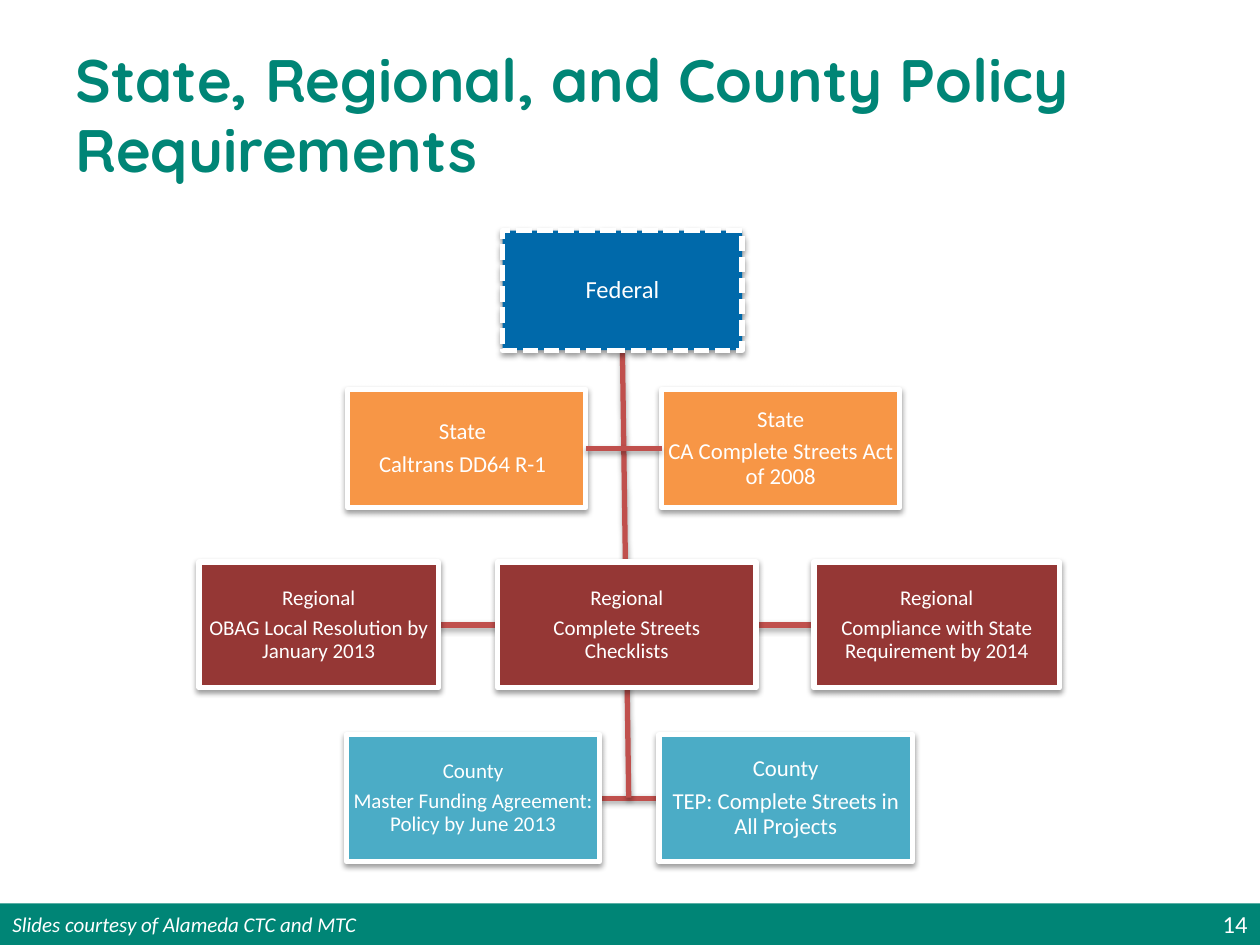
from pptx import Presentation, oxml, util as u
from pptx.dml.color import RGBColor
from pptx.enum import dml, shapes, text
from pptx.oxml.ns import nsdecls

COLORS = {
    "brand": "008576", "white": "FFFFFF", "link": "C0504D", "federal": "0069AA",
    "state": "F79646", "regional": "953735", "county": "4BACC6",
}
CELL = 0.1  # grid of 100 columns by 75 rows, in inches
TOP, LEFT, BOTTOM, RIGHT = range(4)  # connection sites of a rectangle

# Each policy: level, left, top, width, height in grid cells, text size, lines
POLICIES = {
    "federal": ("federal", 39.9, 18.3, 19, 9.5, 14, ["Federal"]),
    "caltrans": ("state", 27.6, 30.9, 18.9, 9.4, 13, ["State", "Caltrans DD64 R-1"]),
    "streets_act": ("state", 52.5, 30.9, 18.9, 9.4, 13,
                    ["State", "CA Complete Streets Act of 2008"]),
    "obag": ("regional", 15.8, 44.6, 19, 10, 12,
             ["Regional", "OBAG Local Resolution by January 2013"]),
    "checklists": ("regional", 39.5, 44.6, 20.5, 10, 12,
                   ["Regional", "Complete Streets", "Checklists"]),
    "compliance": ("regional", 64.6, 44.6, 19.5, 10, 12,
                   ["Regional", "Compliance with State Requirement by 2014"]),
    "funding": ("county", 27.5, 58.3, 20.1, 10.1, 12,
                ["County", "Master Funding Agreement: Policy by June 2013"]),
    "tep": ("county", 52.3, 58.3, 20.1, 10.1, 13,
            ["County", "TEP: Complete Streets in All Projects"]),
}


def grid(*cells):
    return [u.Inches(cell * CELL) for cell in cells]


def rgb(name):
    return RGBColor.from_string(COLORS[name])


def write(shape, lines, size, color="white", align="LEFT", spacing=1.0, after=0,
          **font_format):
    frame = shape.text_frame
    frame.word_wrap = True
    frame.vertical_anchor = text.MSO_ANCHOR.MIDDLE
    frame.text = "\n".join(lines)
    values = {"name": "Calibri", "size": u.Pt(size), **font_format}
    for paragraph in frame.paragraphs:
        paragraph.alignment = text.PP_ALIGN[align]
        paragraph.line_spacing = spacing
        paragraph.space_after = u.Pt(after)
        for key, value in values.items():
            setattr(paragraph.font, key, value)
        paragraph.font.color.rgb = rgb(color)


def add_shadow(shape, opacity):
    shape._element.spPr.append(oxml.parse_xml(
        f'<a:effectLst {nsdecls("a")}><a:outerShdw blurRad="40000" dist="21500" '
        f'dir="5400000" rotWithShape="0"><a:srgbClr val="000000">'
        f'<a:alpha val="{opacity * 1000}"/></a:srgbClr></a:outerShdw></a:effectLst>'))


def add_label(slide, area, lines, size, **style):
    write(slide.shapes.add_textbox(*grid(*area)), lines, size, **style)


def add_footer(slide):
    band = slide.shapes.add_shape(shapes.MSO_SHAPE.RECTANGLE, *grid(0, 71.7, 100, 3.3))
    band.shadow.inherit = False
    band.fill.solid()
    band.fill.fore_color.rgb = rgb("brand")
    band.line.fill.background()
    write(band, ["Slides courtesy of Alameda CTC and MTC"], 12, italic=True)
    add_label(slide, (95, 71.7, 5, 3.3), ["14"], 14, align="RIGHT")


def add_policy(slide, level, left, top, width, height, size, lines):
    box = slide.shapes.add_shape(shapes.MSO_SHAPE.RECTANGLE,
                                 *grid(left, top, width, height))
    box.fill.solid()
    box.fill.fore_color.rgb = rgb(level)
    box.line.color.rgb = rgb("white")
    box.line.width = u.Pt(3)
    add_shadow(box, 38)
    for side in ("left", "top", "right", "bottom"):
        setattr(box.text_frame, f"margin_{side}", u.Inches(0.01))
    write(box, lines, size, align="CENTER", spacing=0.9, after=round(size * 0.35, 2))
    return box


def add_link(slide, start=(0, 0), end=(0, 0)):
    link = slide.shapes.add_connector(shapes.MSO_CONNECTOR.STRAIGHT, *grid(*start, *end))
    link.line.color.rgb = rgb("link")
    link.line.width = u.Pt(3)
    add_shadow(link, 35)
    return link


def join(link, left_box, right_box):
    link.begin_connect(left_box, RIGHT)
    link.end_connect(right_box, LEFT)


def main():
    deck = Presentation()
    deck.slide_width, deck.slide_height = grid(100, 75)
    slide = deck.slides.add_slide(deck.slide_layouts[6])

    # Footer and title
    add_footer(slide)
    add_label(slide, (5, 3, 90, 12.5), ["State, Regional, and County Policy Requirements"],
              34.2, color="brand", spacing=0.97, name="Quicksand", bold=True)

    # Links that run behind the boxes
    county_link = add_link(slide)
    regional_link = add_link(slide)
    trunk = add_link(slide, (49.4, 27.8), (49.9, 63.3))

    # Policy boxes
    boxes = {name: add_policy(slide, *policy) for name, policy in POLICIES.items()}
    boxes["caltrans"].text_frame.margin_right = u.Inches(0.08)
    for paragraph in boxes["checklists"].text_frame.paragraphs[1:]:
        paragraph.space_after = u.Pt(0)
    boxes["federal"].line.dash_style = dml.MSO_LINE.SQUARE_DOT

    # Joins between the boxes; the state link lies in front
    trunk.begin_connect(boxes["federal"], BOTTOM)
    join(county_link, boxes["funding"], boxes["tep"])
    join(regional_link, boxes["obag"], boxes["compliance"])
    join(add_link(slide), boxes["caltrans"], boxes["streets_act"])

    deck.save("out.pptx")


if __name__ == "__main__":
    main()
